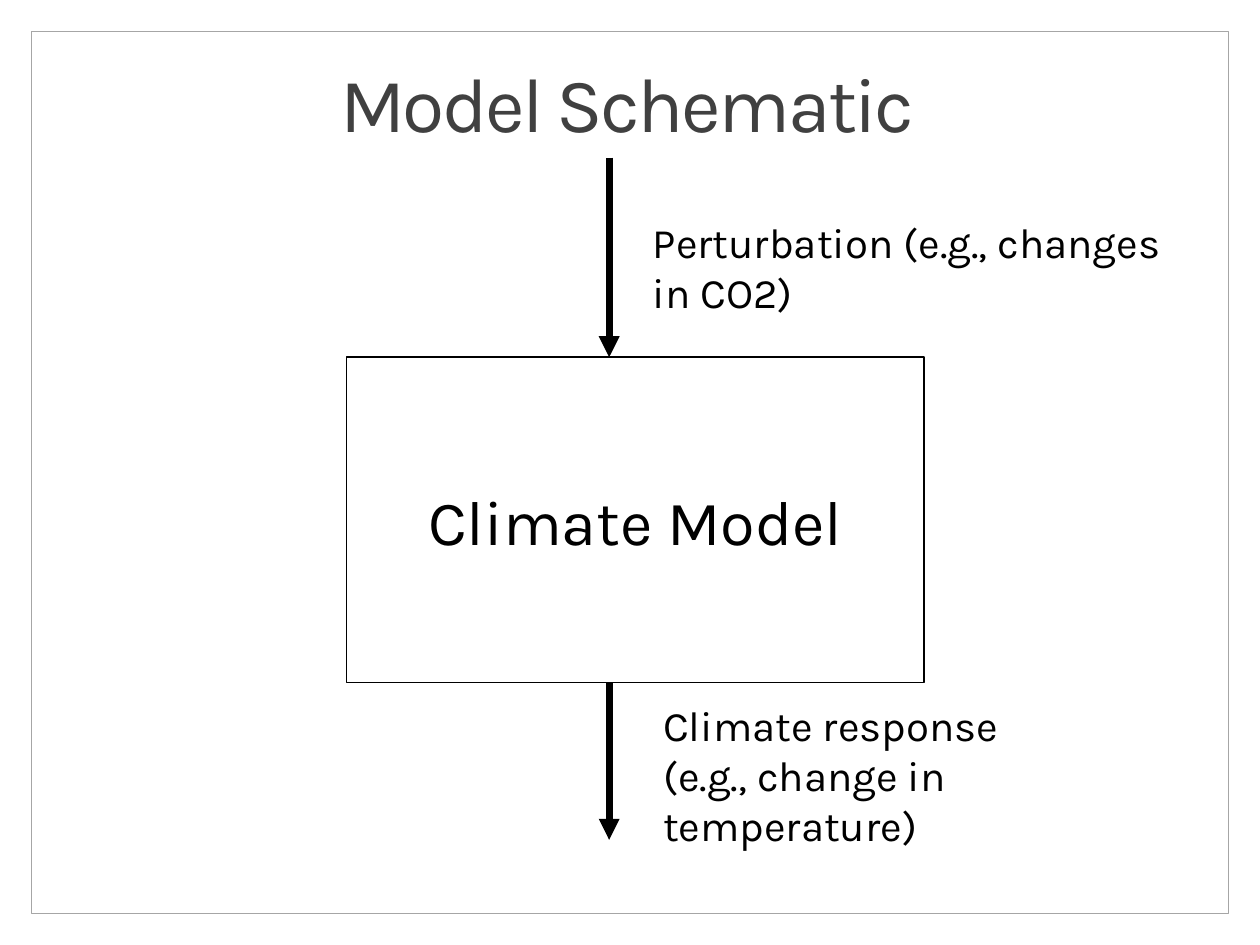
from dataclasses import dataclass

from lxml.etree import SubElement
from pptx import Presentation
from pptx.dml.color import RGBColor
from pptx.enum.shapes import MSO_CONNECTOR, MSO_SHAPE
from pptx.enum.text import MSO_ANCHOR, MSO_AUTO_SIZE, PP_ALIGN
from pptx.oxml.ns import qn
from pptx.util import Cm, Pt


@dataclass(frozen=True)
class Theme:
    font: str = "Karla"
    ink: RGBColor = RGBColor(0x00, 0x00, 0x00)
    title_color: RGBColor = RGBColor(0x40, 0x40, 0x40)
    frame_color: RGBColor = RGBColor(0xA6, 0xA6, 0xA6)
    title_size: int = 44
    box_size: int = 36
    label_size: int = 24
    outline_width: float = 0.75
    arrow_width: float = 4


THEME = Theme()

ARROW_X = 12.28
BOX_LEFT, BOX_TOP, BOX_WIDTH, BOX_HEIGHT = 6.99, 7.2, 11.64, 6.56
BOX_BOTTOM = BOX_TOP + BOX_HEIGHT


def write_text(shape, text, size, color=THEME.ink, align=PP_ALIGN.LEFT,
               anchor=MSO_ANCHOR.TOP, wrap=True, spacing=None):
    """Fill a shape with one paragraph; spacing is in hundredths of a point."""
    frame = shape.text_frame
    frame.auto_size = MSO_AUTO_SIZE.NONE
    frame.word_wrap = wrap
    frame.vertical_anchor = anchor
    paragraph = frame.paragraphs[0]
    paragraph.alignment = align
    run = paragraph.add_run()
    run.text = text
    run.font.name = THEME.font
    run.font.size = Pt(size)
    run.font.color.rgb = color
    if spacing is not None:
        run.font._element.set("spc", str(spacing))


def add_title(slide, text, left, top, width, height):
    title = slide.shapes.title
    title.left, title.top = Cm(left), Cm(top)
    title.width, title.height = Cm(width), Cm(height)
    write_text(title, text, THEME.title_size, color=THEME.title_color,
               align=PP_ALIGN.CENTER, anchor=MSO_ANCHOR.MIDDLE, spacing=-150)


def add_outline(slide, left, top, width, height, color):
    box = slide.shapes.add_shape(MSO_SHAPE.RECTANGLE, Cm(left), Cm(top),
                                 Cm(width), Cm(height))
    box.shadow.inherit = False
    box.fill.background()
    box.line.color.rgb = color
    box.line.width = Pt(THEME.outline_width)
    return box


def add_down_arrow(slide, top, bottom):
    arrow = slide.shapes.add_connector(MSO_CONNECTOR.STRAIGHT, Cm(ARROW_X), Cm(top),
                                       Cm(ARROW_X), Cm(bottom))
    arrow.line.color.rgb = THEME.ink
    arrow.line.width = Pt(THEME.arrow_width)
    SubElement(arrow.line._get_or_add_ln(), qn("a:tailEnd"), type="triangle")
    SubElement(arrow._element.spPr, qn("a:effectLst"))


def add_label(slide, text, left, top, width, height):
    label = slide.shapes.add_textbox(Cm(left), Cm(top), Cm(width), Cm(height))
    write_text(label, text, THEME.label_size)


def main():
    presentation = Presentation()
    presentation.slide_width, presentation.slide_height = Cm(25.4), Cm(19.05)
    title_only = presentation.slide_layouts[5]
    slide = presentation.slides.add_slide(title_only)

    add_outline(slide, 0.64, 0.64, 24.13, 17.78, THEME.frame_color)
    add_title(slide, "Model Schematic", 1.8, 0.76, 21.69, 2.59)

    model_box = add_outline(slide, BOX_LEFT, BOX_TOP, BOX_WIDTH, BOX_HEIGHT, THEME.ink)
    write_text(model_box, "Climate Model", THEME.box_size, align=PP_ALIGN.CENTER,
               anchor=MSO_ANCHOR.MIDDLE, wrap=False)

    add_down_arrow(slide, 3.18, BOX_TOP)
    add_label(slide, "Perturbation (e.g., changes in CO2)", 12.91, 4.23, 11.43, 2.31)
    add_down_arrow(slide, BOX_BOTTOM, 16.93)
    add_label(slide, "Climate response (e.g., change in temperature)",
              13.12, 13.97, 7.41, 3.33)

    presentation.save("out.pptx")


if __name__ == "__main__":
    main()
